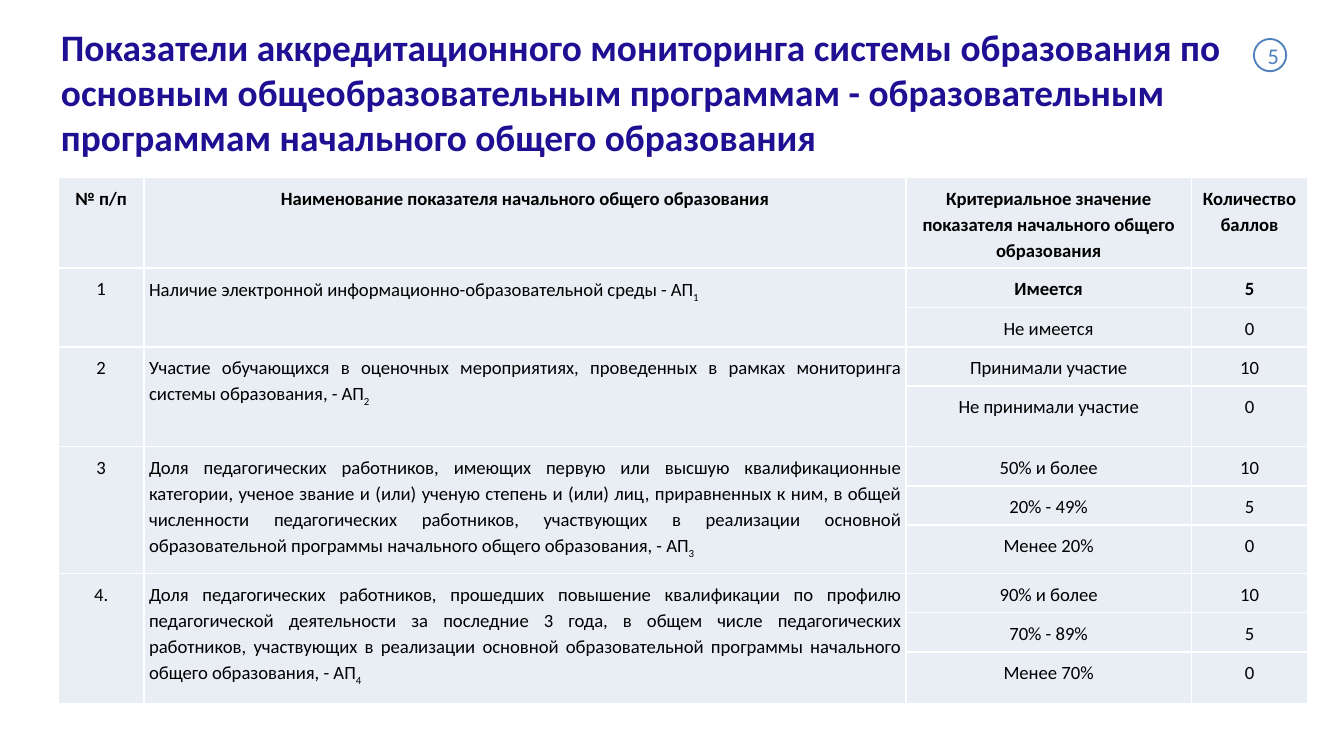
from lxml.etree import SubElement
from pptx import Presentation
from pptx.dml.color import RGBColor
from pptx.enum.shapes import MSO_SHAPE as Shape
from pptx.enum.text import MSO_ANCHOR as Anchor, PP_ALIGN as Align
from pptx.oxml.ns import qn
from pptx.util import Pt

PX = 4572  # 200 px to the inch
FONT = "Calibri"
COLORS = {"title": "1F0F93", "text": "000000", "cell": "E9EDF4",
          "white": "FFFFFF", "badge": "4F81BD"}

TITLE = ("Показатели аккредитационного мониторинга системы образования по "
         "основным общеобразовательным программам - образовательным "
         "программам начального общего образования")
HEADERS = ["№ п/п", "Наименование показателя начального общего образования",
           "Критериальное значение показателя начального общего образования",
           "Количество баллов"]
# Number, indicator, subscript, (criterion, points) pairs
INDICATORS = [
    ("1", "Наличие электронной информационно-образовательной среды - АП", "1",
     [("Имеется", "5"), ("Не имеется", "0")]),
    ("2", "Участие обучающихся в оценочных мероприятиях, проведенных в рамках "
     "мониторинга системы образования, - АП", "2",
     [("Принимали участие", "10"), ("Не принимали участие", "0")]),
    ("3", "Доля педагогических работников, имеющих первую или высшую "
     "квалификационные категории, ученое звание и (или) ученую степень и (или) "
     "лиц, приравненных к ним, в общей численности педагогических работников, "
     "участвующих в реализации основной образовательной программы начального "
     "общего образования, - АП", "3",
     [("50% и более", "10"), ("20% - 49%", "5"), ("Менее 20%", "0")]),
    ("4.", "Доля педагогических работников, прошедших повышение квалификации по "
     "профилю педагогической деятельности за последние 3 года, в общем числе "
     "педагогических работников, участвующих в реализации основной "
     "образовательной программы начального общего образования, - АП", "4",
     [("90% и более", "10"), ("70% - 89%", "5"), ("Менее 70%", "0")]),
]
COLUMN_WIDTHS = [127, 1134, 425, 173]
# Least heights: rows grow to fit their text
ROW_HEIGHTS = [110, 56, 56, 56, 90, 56, 56, 72, 56, 56, 78]


def rgb(name):
    return RGBColor.from_string(COLORS[name])


def emu(*lengths):
    return [length * PX for length in lengths]


def write(frame, text, size=10, color="text", bold=False, align=Align.CENTER,
          spacing=None, subscript=""):
    para = frame.paragraphs[0]
    para.alignment = align
    para.line_spacing = spacing
    for part, baseline in ((text, 0), (subscript, -25000)):
        if not part:
            continue
        span = para.add_run()
        span.text = part
        span.font.name, span.font.size, span.font.bold = FONT, Pt(size), bold
        span.font.color.rgb = rgb(color)
        if baseline:
            span.font._element.set("baseline", str(baseline))


def set_margins(target, side, edge):
    target.margin_left = target.margin_right = side * PX
    target.margin_top = target.margin_bottom = edge * PX


def add_title(page, box):
    frame = page.shapes.add_textbox(*emu(*box)).text_frame
    frame.word_wrap = True
    frame.vertical_anchor = Anchor.MIDDLE
    set_margins(frame, 20, 10)
    write(frame, TITLE, size=20, color="title", bold=True, align=Align.LEFT)


def add_badge(page, box):
    badge = page.shapes.add_shape(Shape.OVAL, *emu(*box))
    badge.shadow.inherit = False
    badge.fill.solid()
    badge.fill.fore_color.rgb = rgb("white")
    badge.line.color.rgb = rgb("badge")
    badge.line.width = Pt(1)
    frame = badge.text_frame
    frame.word_wrap = False
    frame.vertical_anchor = Anchor.MIDDLE
    set_margins(frame, 0, 0)
    frame.margin_left = 10 * PX
    write(frame, "5", size=12, color="badge")


def style_cell(cell):
    set_margins(cell, 8, 10)
    props = cell._tc.get_or_add_tcPr()
    for side in ("a:lnL", "a:lnR", "a:lnT", "a:lnB"):
        border = SubElement(props, qn(side), w=str(Pt(1)))
        fill = SubElement(border, qn("a:solidFill"))
        SubElement(fill, qn("a:srgbClr"), val=COLORS["white"])
    cell.fill.solid()
    cell.fill.fore_color.rgb = rgb("cell")


def add_indicator_table(page, box):
    holder = page.shapes.add_table(
        len(ROW_HEIGHTS), len(COLUMN_WIDTHS), *emu(*box))
    table = holder.table
    for column, width in zip(table.columns, COLUMN_WIDTHS):
        column.width = width * PX
    for row, height in zip(table.rows, ROW_HEIGHTS):
        row.height = height * PX
    holder.height = box[3] * PX
    for cell in table.iter_cells():
        style_cell(cell)

    def put(row, column, text, **style):
        write(table.cell(row, column).text_frame, text, spacing=1.15, **style)

    for column, header in enumerate(HEADERS):
        put(0, column, header, bold=True)

    top = 1
    for number, name, subscript, criteria in INDICATORS:
        bottom = top + len(criteria) - 1
        for column in (0, 1):
            table.cell(top, column).merge(table.cell(bottom, column))
        put(top, 0, number)
        put(top, 1, name, align=Align.JUSTIFY, subscript=subscript)
        for row, (criterion, points) in enumerate(criteria, top):
            put(row, 2, criterion, bold=row == 1)
            put(row, 3, points, bold=row == 1)
        top = bottom + 1


def main():
    deck = Presentation()
    deck.slide_width, deck.slide_height = emu(2000, 1125)
    page = deck.slides.add_slide(deck.slide_layouts[6])
    add_title(page, (71, 36, 1826, 200))
    add_indicator_table(page, (87, 264, sum(COLUMN_WIDTHS), 794))
    add_badge(page, (1866, 58, 48, 48))
    deck.save("out.pptx")


if __name__ == "__main__":
    main()
